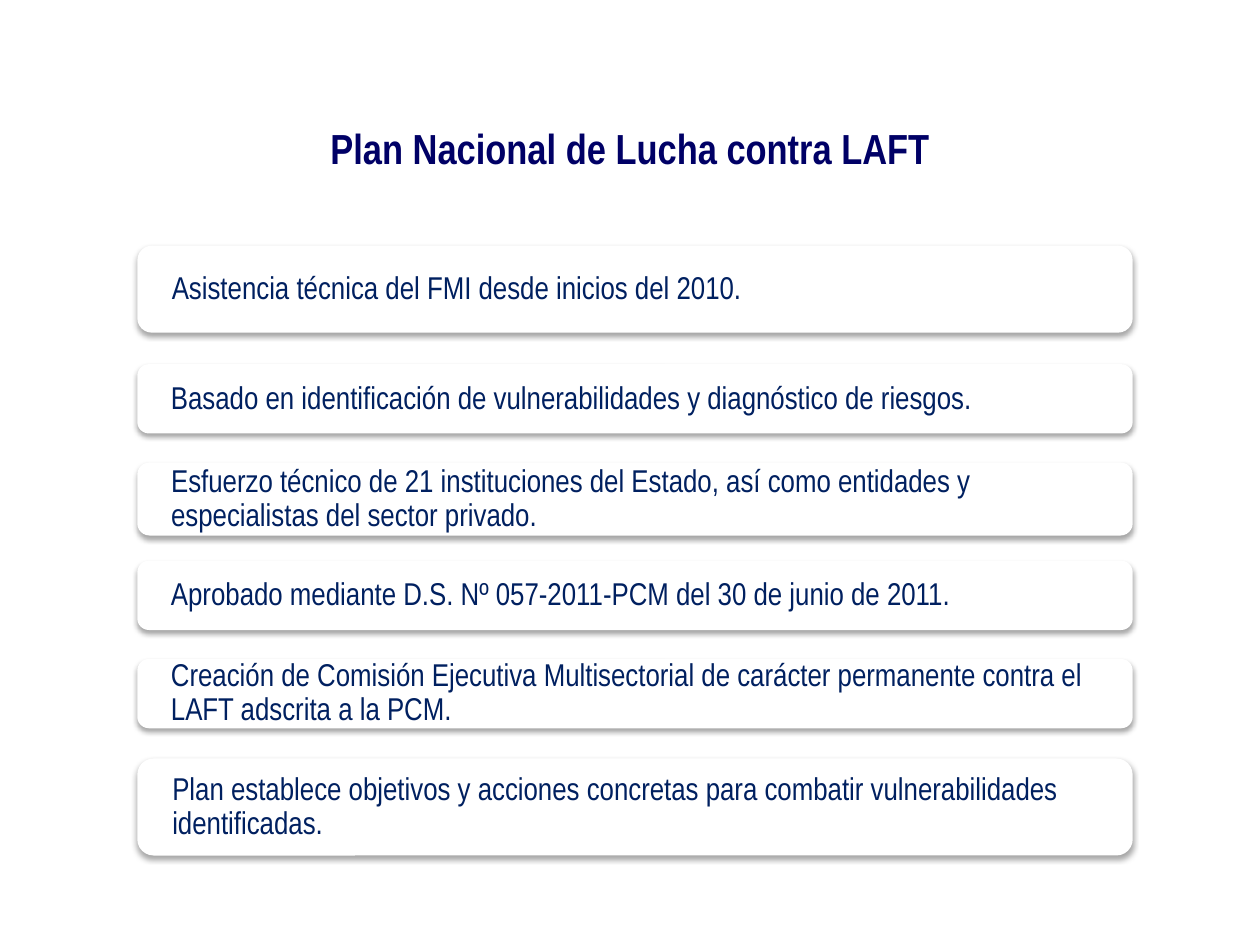
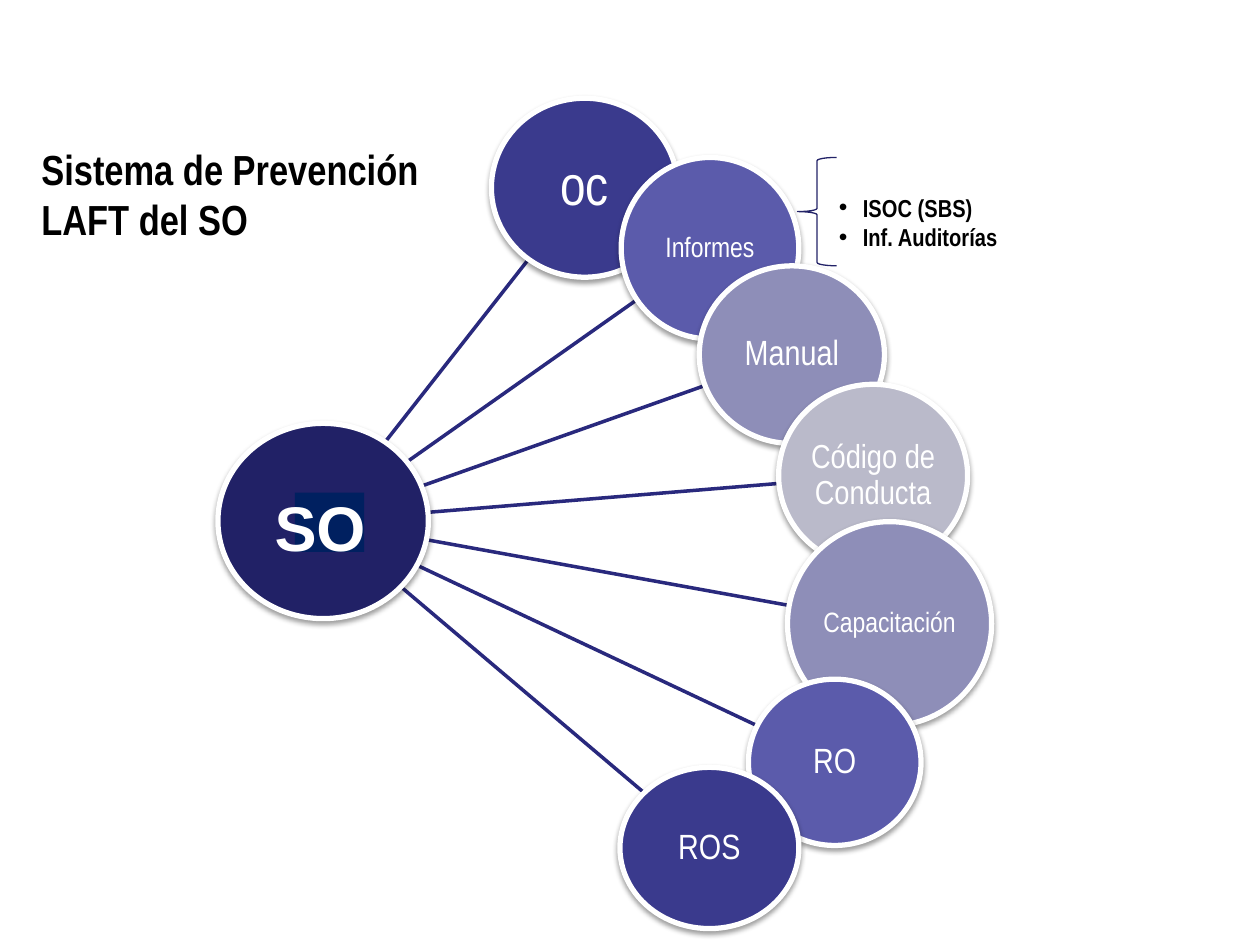
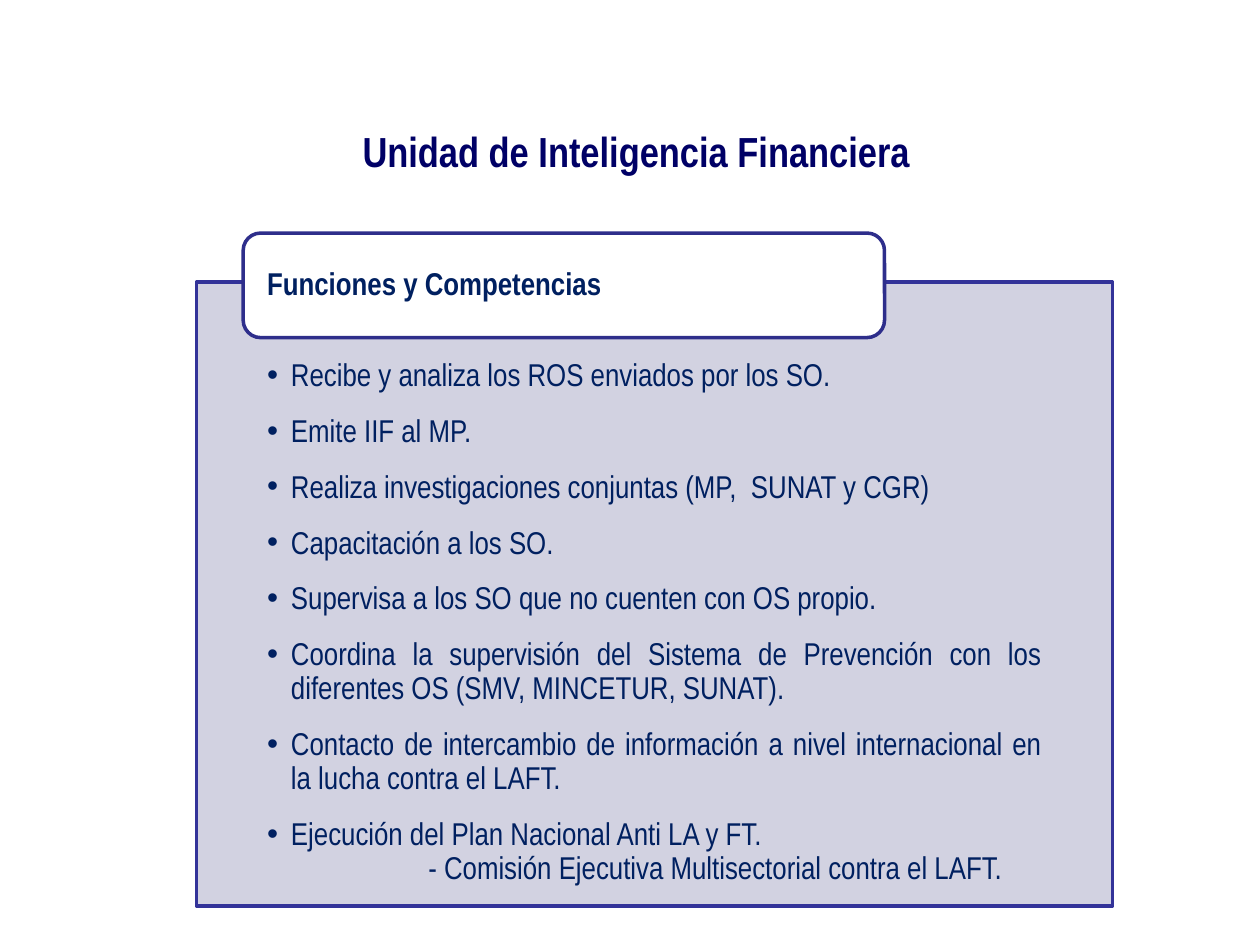
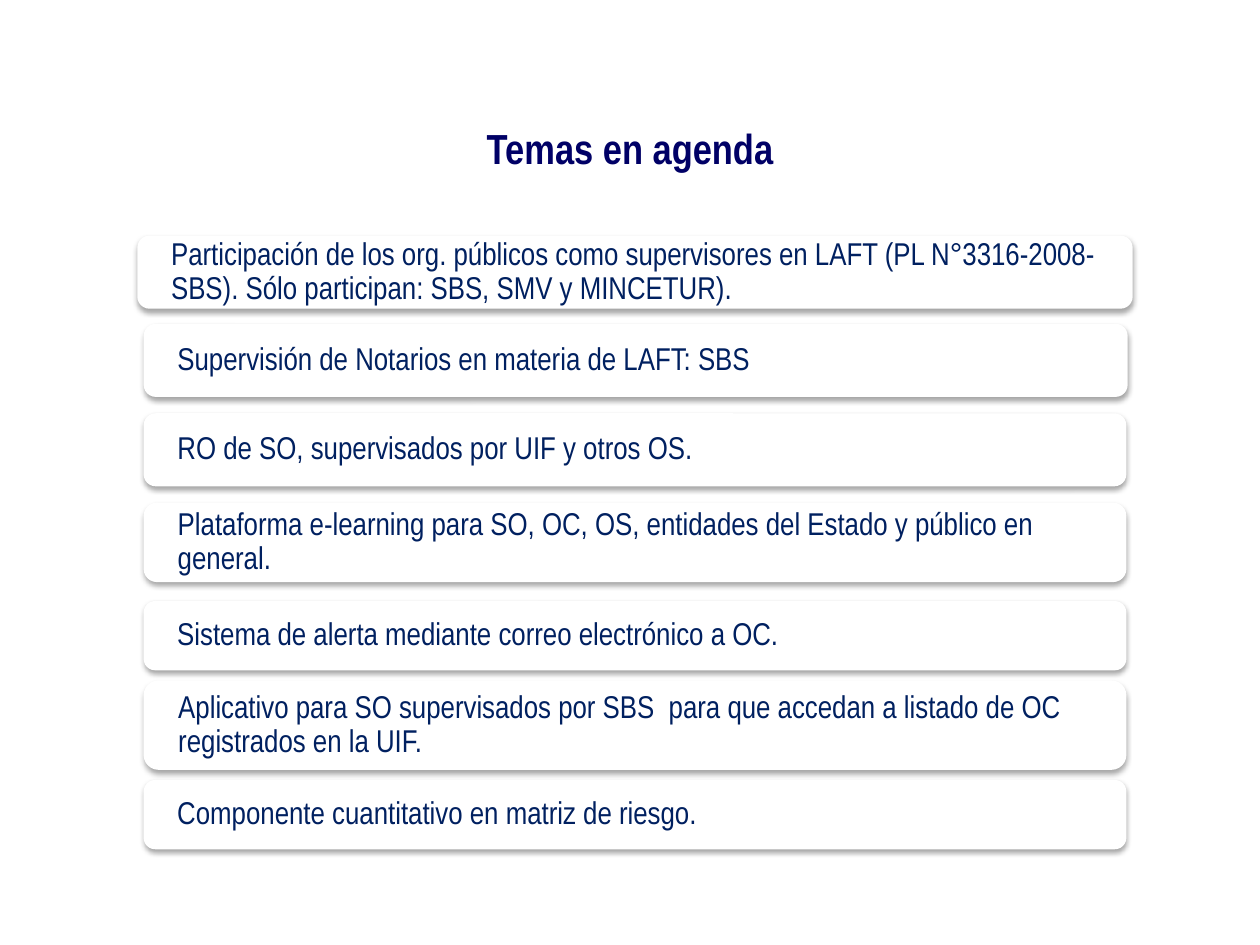
from math import hypot

from lxml import etree
from pptx import Presentation
from pptx.dml.color import RGBColor
from pptx.enum.shapes import MSO_CONNECTOR, MSO_SHAPE
from pptx.enum.text import MSO_ANCHOR, PP_ALIGN
from pptx.oxml.ns import qn
from pptx.util import Inches, Pt

RECTANGLE, ROUNDED = MSO_SHAPE.RECTANGLE, MSO_SHAPE.ROUNDED_RECTANGLE
OVAL, LEFT_BRACE = MSO_SHAPE.OVAL, MSO_SHAPE.LEFT_BRACE
STRAIGHT = MSO_CONNECTOR.STRAIGHT
TOP, MIDDLE = MSO_ANCHOR.TOP, MSO_ANCHOR.MIDDLE
LEFT, CENTER, JUSTIFY = PP_ALIGN.LEFT, PP_ALIGN.CENTER, PP_ALIGN.JUSTIFY

WHITE = RGBColor(0xFF, 0xFF, 0xFF)
BLACK = RGBColor(0x00, 0x00, 0x00)
TITLE_NAVY = RGBColor(0x00, 0x00, 0x66)
TEXT_NAVY = RGBColor(0x00, 0x20, 0x60)
HUB_NAVY = RGBColor(0x21, 0x21, 0x66)
SPOKE_NAVY = RGBColor(0x29, 0x29, 0x7D)
BRACE_NAVY = RGBColor(0x22, 0x22, 0x67)
INDIGO = RGBColor(0x3A, 0x3A, 0x8D)
VIOLET = RGBColor(0x5B, 0x5B, 0xAB)
LAVENDER = RGBColor(0x8E, 0x8E, 0xB8)
MIST = RGBColor(0xBA, 0xBA, 0xCA)
PANEL_GREY = RGBColor(0xCE, 0xCE, 0xDE)
PANEL_LINE = RGBColor(0x33, 0x33, 0x99)
TAB_LINE = RGBColor(0x2E, 0x2E, 0x8B)

NARROW = "Arial Narrow"
TITLE_BOX = (0.5, 0.77, 9, 0.8)
DEFAULT_INSETS = (0.1, 0.05, 0.1, 0.05)
CARD_INSETS = (0.24, 0, 0.24, 0)
CIRCLE_INSETS = (0.01, 0.01, 0.01, 0.01)

PLAN_CARDS = [
    (1.09, 1.95, 7.9, 0.69, "Asistencia técnica del FMI desde inicios del 2010."),
    (1.09, 2.89, 7.9, 0.55, "Basado en identificación de vulnerabilidades y diagnóstico de riesgos."),
    (1.09, 3.67, 7.9, 0.58, "Esfuerzo técnico de 21 instituciones del Estado, así como entidades y "
                            "especialistas del sector privado."),
    (1.09, 4.45, 7.9, 0.55, "Aprobado mediante D.S. Nº 057-2011-PCM del 30 de junio de 2011."),
    (1.09, 5.23, 7.9, 0.55, "Creación de Comisión Ejecutiva Multisectorial de carácter permanente "
                            "contra el LAFT adscrita a la PCM."),
    (1.09, 6.02, 7.9, 0.77, "Plan establece objetivos y acciones concretas para combatir "
                            "vulnerabilidades identificadas."),
]
AGENDA_CARDS = [
    (1.09, 1.87, 7.9, 0.58, "Participación de los org. públicos como supervisores en LAFT "
                            "(PL N°3316-2008-SBS). Sólo participan: SBS, SMV y MINCETUR)."),
    (1.14, 2.57, 7.81, 0.58, "Supervisión de Notarios en materia de LAFT: SBS"),
    (1.14, 3.28, 7.8, 0.58, "RO de SO, supervisados por UIF y otros OS."),
    (1.14, 3.99, 7.8, 0.63, "Plataforma e-learning para SO, OC, OS, entidades del Estado y "
                            "público en general."),
    (1.14, 4.77, 7.8, 0.55, "Sistema de alerta mediante correo electrónico a OC."),
    (1.14, 5.4, 7.8, 0.71, "Aplicativo para SO supervisados por SBS  para que accedan a listado "
                           "de OC registrados en la UIF."),
    (1.14, 6.19, 7.8, 0.55, "Componente cuantitativo en matriz de riesgo."),
]
HUB_BOX = (1.73, 3.36, 1.67, 1.55)
SATELLITES = [
    ((3.9, 0.78, 1.48, 1.42), "oc", 32, INDIGO),
    ((4.93, 1.25, 1.41, 1.44), "Informes", 16, VIOLET),
    ((5.55, 2.11, 1.47, 1.41), "Manual", 20, LAVENDER),
    ((6.18, 3.05, 1.5, 1.45), "Código de Conducta", 19, MIST),
    ((6.25, 4.14, 1.62, 1.62), "Capacitación", 16, LAVENDER),
    ((5.94, 5.39, 1.37, 1.32), "RO", 20, VIOLET),
    ((4.92, 6.09, 1.42, 1.28), "ROS", 20, INDIGO),
]
FUNCTIONS = [
    "Recibe y analiza los ROS enviados por los SO.",
    "Emite IIF al MP.",
    "Realiza investigaciones conjuntas (MP,  SUNAT y CGR)",
    "Capacitación a los SO.",
    "Supervisa a los SO que no cuenten con OS propio.",
    "Coordina la supervisión del Sistema de Prevención con los diferentes OS "
    "(SMV, MINCETUR, SUNAT).",
    "Contacto de intercambio de información a nivel internacional en la lucha contra el LAFT.",
    "Ejecución del Plan Nacional Anti LA y FT.",
]
COMMISSION = "- Comisión Ejecutiva Multisectorial contra el LAFT."


def place(box):
    """Turn a box in inches into lengths."""
    return [Inches(value) for value in box]


def add_outline(slide, kind, box, fill=None, line=None, width=0):
    """Add a preset shape without shadow."""
    shape = slide.shapes.add_shape(kind, *place(box))
    shape.shadow.inherit = False
    if fill is None:
        shape.fill.background()
    else:
        shape.fill.solid()
        shape.fill.fore_color.rgb = fill
    if line is None:
        shape.line.fill.background()
    else:
        shape.line.color.rgb = line
        shape.line.width = Pt(width)
    return shape


def add_soft_shadow(shape, opacity):
    """Give a shape a blurred shadow that falls straight down."""
    effects = shape._element.spPr.find(qn("a:effectLst"))
    shadow = etree.SubElement(effects, qn("a:outerShdw"), blurRad=str(Pt(3.1)),
                              dist=str(Pt(1.8)), dir="5400000", rotWithShape="0")
    color = etree.SubElement(shadow, qn("a:srgbClr"), val=str(BLACK))
    etree.SubElement(color, qn("a:alpha"), val=str(opacity * 1000))


def set_indent(paragraph, margin, bullet=False):
    """Indent a paragraph, hanging a bullet in the margin if asked."""
    properties = paragraph._p.get_or_add_pPr()
    properties.set("marL", str(Inches(margin)))
    properties.set("indent", str(-Inches(margin) if bullet else 0))
    if bullet:
        etree.SubElement(properties, qn("a:buFont"), typeface="Arial")
        etree.SubElement(properties, qn("a:buChar"), char="•")


def write_text(shape, lines, size, color, bold=False, align=LEFT, anchor=MIDDLE,
               insets=CARD_INSETS, spacing=0.9, font=NARROW, bullets=False):
    """Fill a shape with one paragraph a line and return the paragraphs."""
    frame = shape.text_frame
    frame.word_wrap = True
    frame.vertical_anchor = anchor
    (frame.margin_left, frame.margin_top,
     frame.margin_right, frame.margin_bottom) = place(insets)
    frame.text = "\n".join(lines)
    for paragraph in frame.paragraphs:
        if bullets:
            set_indent(paragraph, 0.19, bullet=True)
        paragraph.alignment = align
        paragraph.line_spacing = spacing
        paragraph.font.name = font
        paragraph.font.size = Pt(size)
        paragraph.font.bold = bold
        paragraph.font.color.rgb = color
    return frame.paragraphs


def add_label(slide, box, lines, size, color, **style):
    """Add a bold text box with single line spacing."""
    label = slide.shapes.add_textbox(*place(box))
    write_text(label, lines, size, color, bold=True, insets=DEFAULT_INSETS, spacing=1.0, **style)


def add_title(slide, text, box=TITLE_BOX):
    """Add the centred slide title."""
    add_label(slide, box, [text], 24, TITLE_NAVY, align=CENTER)


def add_card(slide, box, text):
    """Add a white rounded card with a shadow."""
    card = add_outline(slide, ROUNDED, box, WHITE)
    add_soft_shadow(card, 35)
    write_text(card, [text], 18, TEXT_NAVY)


def build_cards_slide(slide, title, cards):
    """Build a title above a stack of cards."""
    add_title(slide, title)
    for *box, text in cards:
        add_card(slide, box, text)


def center_of(box):
    """Return the centre of a box."""
    left, top, width, height = box
    return left + width / 2, top + height / 2


def edge_toward(box, target):
    """Return where the ellipse in a box meets the line to a target's centre."""
    (x, y), (target_x, target_y) = center_of(box), center_of(target)
    run, rise = target_x - x, target_y - y
    scale = 1 / hypot(run / (box[2] / 2), rise / (box[3] / 2))
    return x + run * scale, y + rise * scale


def add_spoke(slide, start_box, end_box):
    """Join two circles with a line from edge to edge."""
    ends = edge_toward(start_box, end_box) + edge_toward(end_box, start_box)
    spoke = slide.shapes.add_connector(STRAIGHT, *place(ends))
    spoke.line.color.rgb = SPOKE_NAVY
    spoke.line.width = Pt(2)
    etree.SubElement(spoke._element.spPr, qn("a:effectLst"))


def add_circle(slide, box, fill):
    """Add a circle with a white rim and a shadow."""
    circle = add_outline(slide, OVAL, box, fill, WHITE, 3)
    add_soft_shadow(circle, 38)
    return circle


def add_hub(slide, box):
    """Add the hub circle with its highlighted name."""
    left, top = box[:2]
    add_circle(slide, box, HUB_NAVY)
    add_outline(slide, RECTANGLE, (left + 0.61, top + 0.55, 0.55, 0.47), TEXT_NAVY)
    add_label(slide, (left + 0.3, top + 0.47, 1.02, 0.71), ["SO"], 36, WHITE,
              align=CENTER, anchor=TOP, font="Arial")


def add_report_note(slide, box):
    """Add a brace with the list of reports beside it."""
    left, top, width, height = box
    add_outline(slide, LEFT_BRACE, (left, top, 0.31, height), line=BRACE_NAVY, width=0.75)
    add_label(slide, (left + 0.23, top + 0.23, width - 0.23, 0.58),
              ["ISOC (SBS)", "Inf. Auditorías"], 14, BLACK, anchor=TOP, bullets=True)


def build_system_slide(slide):
    """Build the hub with its ring of satellites."""
    for box, *_ in SATELLITES:
        add_spoke(slide, HUB_BOX, box)
    add_hub(slide, HUB_BOX)
    for box, text, size, fill in SATELLITES:
        circle = add_circle(slide, box, fill)
        write_text(circle, [text], size, WHITE, align=CENTER, insets=CIRCLE_INSETS)
    add_report_note(slide, (6.33, 1.25, 3.2, 0.86))
    add_label(slide, (0.23, 1.09, 3.36, 1.25), ["Sistema de Prevención LAFT del SO"],
              24, BLACK, anchor=TOP)


def add_function_panel(slide, box):
    """Add the panel of functions with its heading tab."""
    left, top = box[:2]
    panel = add_outline(slide, RECTANGLE, box, PANEL_GREY, PANEL_LINE, 2)
    color = panel._element.spPr.find(qn("a:solidFill"))[0]
    etree.SubElement(color, qn("a:alpha"), val="90000")
    paragraphs = write_text(panel, FUNCTIONS + [COMMISSION], 18, TEXT_NAVY, align=JUSTIFY,
                            anchor=TOP, insets=(0.56, 0.61, 0.56, 0.14))
    for paragraph in paragraphs[:-1]:
        set_indent(paragraph, 0.19, bullet=True)
    for paragraph in paragraphs[:-2]:
        paragraph.space_after = Pt(12.5)
    set_indent(paragraphs[-1], 1.28)
    tab = add_outline(slide, ROUNDED, (left + 0.37, top - 0.39, 5.09, 0.83), WHITE, TAB_LINE, 2)
    write_text(tab, ["Funciones y Competencias"], 18, TEXT_NAVY, bold=True,
               insets=(0.15, 0, 0.15, 0))


def build_functions_slide(slide):
    """Build the title and the panel of functions."""
    add_title(slide, "Unidad de Inteligencia Financiera", (0.1, 0.6, 9.9, 1.2))
    add_function_panel(slide, (1.56, 2.24, 7.27, 4.95))


def main():
    """Build the presentation and save it."""
    presentation = Presentation()
    presentation.slide_width, presentation.slide_height = Inches(10), Inches(7.5)
    blank = presentation.slide_layouts[6]
    plan, system, functions, agenda = [presentation.slides.add_slide(blank) for _ in range(4)]
    build_cards_slide(plan, "Plan Nacional de Lucha contra LAFT", PLAN_CARDS)
    build_system_slide(system)
    build_functions_slide(functions)
    build_cards_slide(agenda, "Temas en agenda", AGENDA_CARDS)
    presentation.save("out.pptx")


if __name__ == "__main__":
    main()
